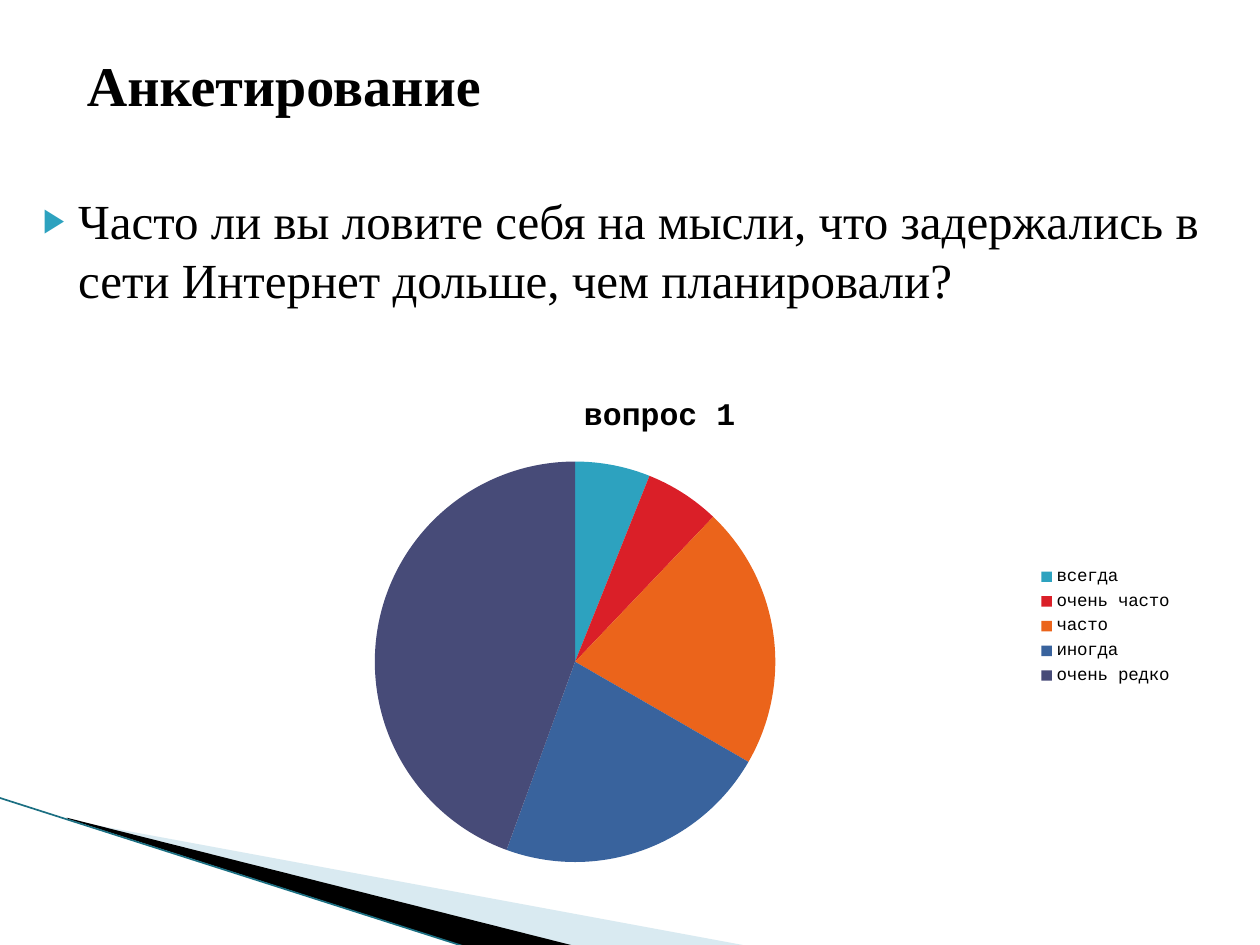
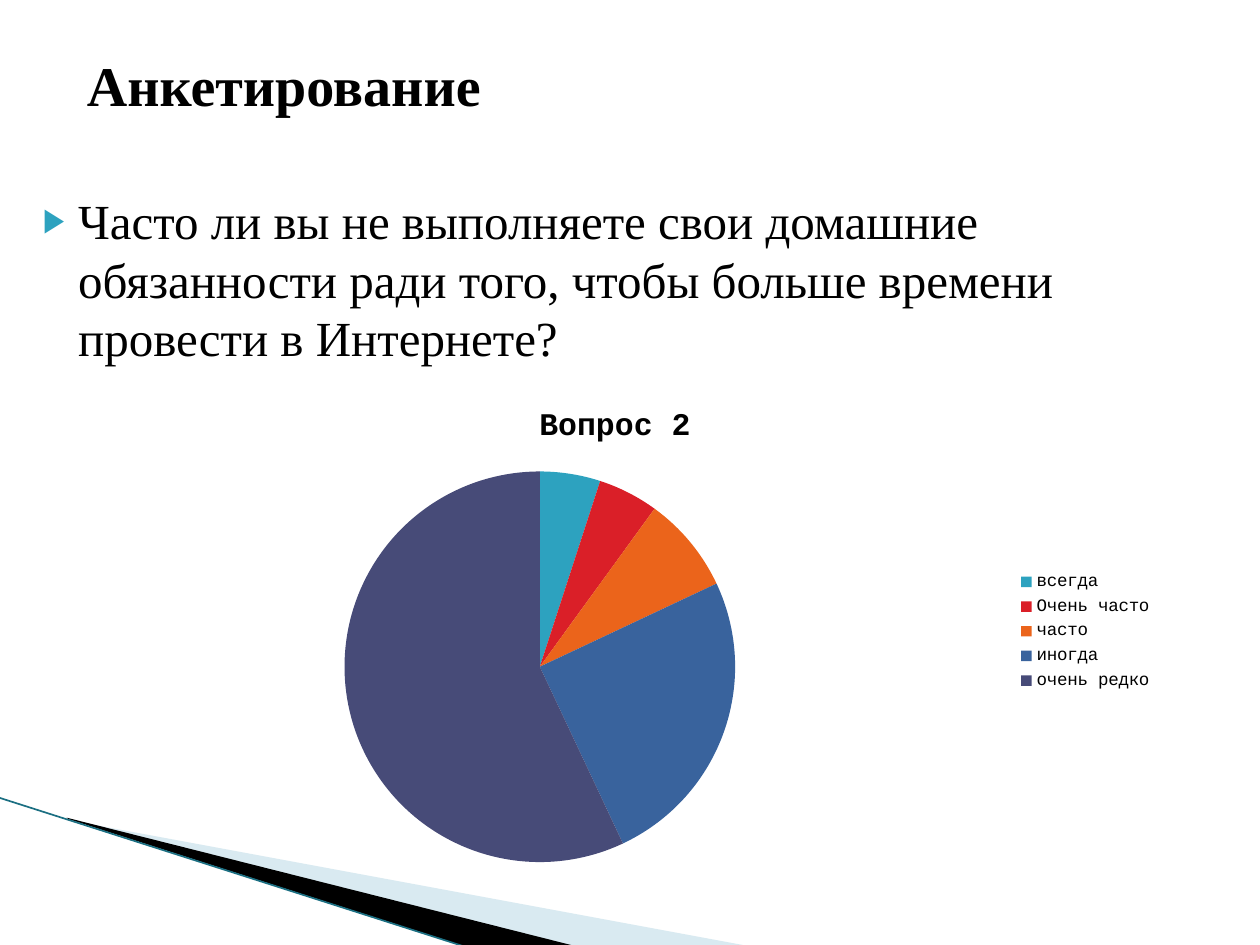
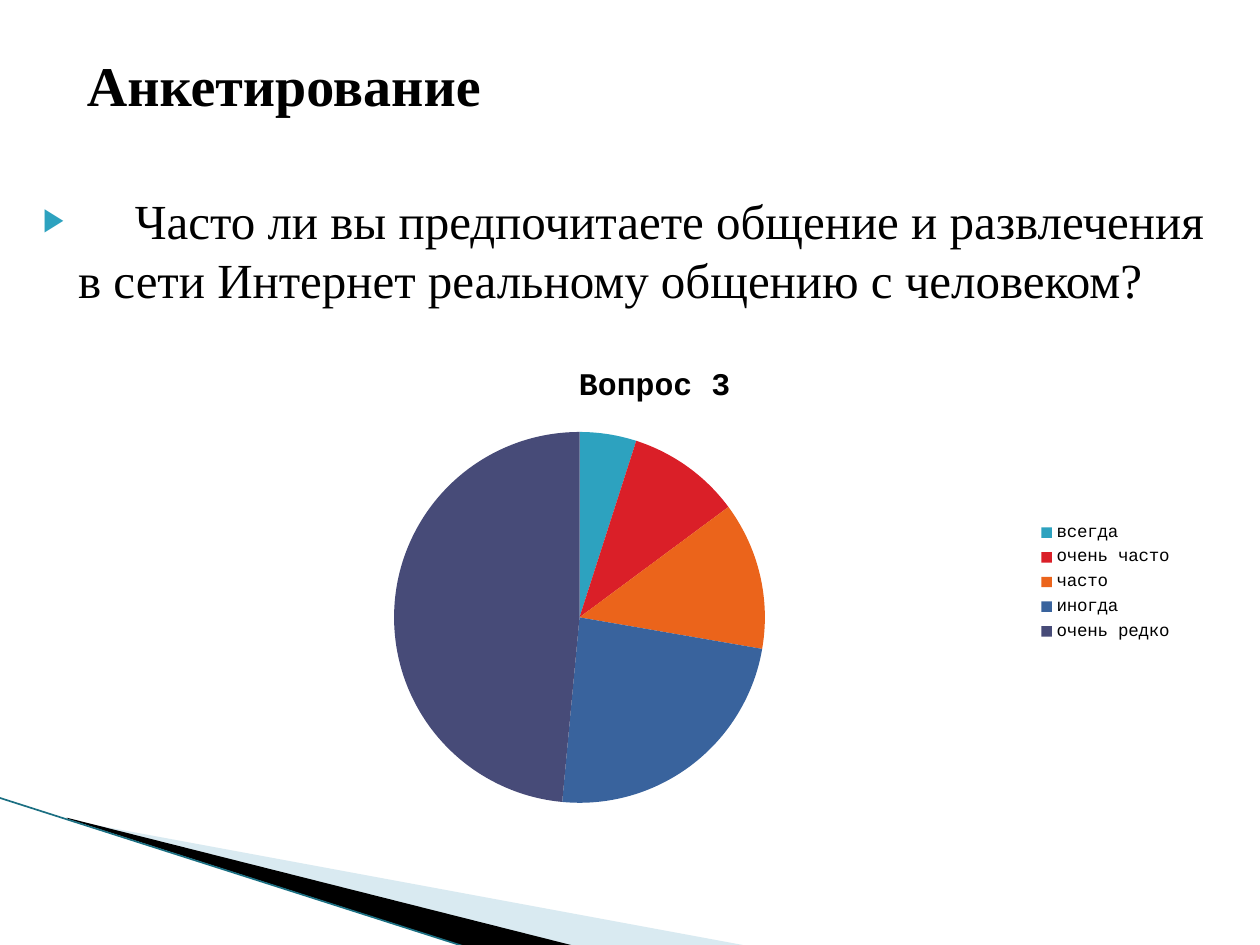
from lxml import etree
from pptx import Presentation
from pptx.chart.data import CategoryChartData
from pptx.dml.color import RGBColor
from pptx.enum.chart import XL_CHART_TYPE as ChartType, XL_LEGEND_POSITION as LegendPosition
from pptx.enum.shapes import MSO_CONNECTOR as Connector
from pptx.enum.text import MSO_ANCHOR as Anchor, MSO_AUTO_SIZE as AutoSize, PP_ALIGN as Align
from pptx.oxml.ns import qn
from pptx.util import Inches, Pt

HEADING = "Анкетирование"
SERIF, MONO = "Times New Roman", "Courier New"
BLACK, TEAL, EDGE = "000000", "2DA2BF", "1B6F82"
SLICE_COLORS = [TEAL, "DA1F28", "EB641B", "39639D", "474B78"]
ANSWERS = ["всегда", "очень часто", "часто", "иногда", "очень редко"]

HEADING_BOX = (0.59, 0.04, 8.17, 1.25)
QUESTION_BOX = (0.12, 1.47, 9.58, 6.01)
WEDGES = [
    ([(0.55, 6.51), (5.95, 7.51), (4.56, 7.51), (0.55, 6.5)], "A0CBDC", 40),
    ([(0.53, 6.49), (4.57, 7.51), (3.72, 7.52), (0.54, 6.5)], BLACK, 100),
]
EDGE_LINE = (-0.01, 6.33, 3.71, 7.52)

SURVEY = [
    {
        "question": "Часто ли вы ловите себя на мысли, что задержались в сети Интернет "
                    "дольше, чем планировали?",
        "chart_title": " вопрос 1",
        "answers": ANSWERS,
        "percents": [6, 6, 21, 22, 44],
        "chart_box": (0.91, 2.96, 8.5, 4.02),
    },
    {
        "question": "Часто ли вы не выполняете свои домашние обязанности ради того, "
                    "чтобы больше времени провести в Интернете?",
        "chart_title": "Вопрос 2",
        "answers": ["всегда", "Очень часто", *ANSWERS[2:]],
        "percents": [5, 5, 8, 25, 57],
        "chart_box": (0.51, 3.04, 8.74, 3.94),
    },
    {
        "question": " Часто ли вы предпочитаете общение и развлечения в сети Интернет "
                    "реальному общению с человеком?",
        "chart_title": "Вопрос 3",
        "answers": ANSWERS,
        "percents": [5, 10, 13, 24, 49],
        "chart_box": (0.98, 2.73, 8.43, 3.78),
    },
]


def rgb(color):
    """Turn a hex string into a colour."""
    return RGBColor.from_string(color)


def inches(box):
    """Turn a tuple of numbers into lengths."""
    return [Inches(length) for length in box]


def style(font, name, size, bold=False):
    """Set face, size, weight and the common black colour."""
    font.name, font.size, font.bold = name, Pt(size), bold
    font.color.rgb = rgb(BLACK)


def place(part, box):
    """Move a placeholder to its box."""
    part.left, part.top, part.width, part.height = inches(box)


def add_wedge(shapes, corners, color, opacity):
    """Draw one corner wedge."""
    start, *others = [inches(corner) for corner in corners]
    builder = shapes.build_freeform(*start)
    builder.add_line_segments(others, close=True)
    wedge = builder.convert_to_shape()
    wedge.shadow.inherit = False
    wedge.fill.solid()
    wedge.fill.fore_color.rgb = rgb(color)
    wedge.line.fill.background()
    if opacity < 100:
        tint = wedge.element.find(".//" + qn("a:srgbClr"))
        etree.SubElement(tint, qn("a:alpha"), val=str(opacity * 1000))
    return wedge


def add_edge(shapes):
    """Draw the thin line along the wedges."""
    edge = shapes.add_connector(Connector.STRAIGHT, *inches(EDGE_LINE))
    edge.line.color.rgb = rgb(EDGE)
    edge.line.width = Pt(0.95)
    etree.SubElement(edge.element.spPr, qn("a:effectLst"))
    return edge


def decorate_layout(layout, slide):
    """Put the corner decoration on the layout, behind its placeholders."""
    for placeholder in list(layout.placeholders):
        if placeholder.placeholder_format.idx >= 10:
            placeholder.element.getparent().remove(placeholder.element)
    decoration = [add_wedge(slide.shapes, *wedge) for wedge in WEDGES]
    decoration.append(add_edge(slide.shapes))
    for position, part in enumerate(decoration, start=2):
        layout.shapes.element.insert(position, part.element)


def fill_heading(heading):
    """Write the slide title."""
    place(heading, HEADING_BOX)
    frame = heading.text_frame
    frame.text = HEADING
    frame.vertical_anchor = Anchor.MIDDLE
    frame.auto_size = AutoSize.NONE
    frame.paragraphs[0].alignment = Align.LEFT
    style(frame.paragraphs[0].runs[0].font, SERIF, 32, bold=True)


def fill_question(body, question):
    """Write the question with its triangular bullet and any widened lead-in space."""
    place(body, QUESTION_BOX)
    frame = body.text_frame
    frame.auto_size = AutoSize.NONE
    frame.margin_top = Inches(0.04)
    paragraph = frame.paragraphs[0]
    paragraph.space_before = Pt(0)
    paragraph.line_spacing = 1.0
    properties = paragraph._p.get_or_add_pPr()
    properties.set("marL", str(Inches(0.4)))
    properties.set("indent", str(Inches(-0.28)))
    bullet_color = etree.SubElement(properties, qn("a:buClr"))
    etree.SubElement(bullet_color, qn("a:srgbClr"), val=TEAL)
    etree.SubElement(properties, qn("a:buSzPct"), val="68000")
    etree.SubElement(properties, qn("a:buChar"), char="▶")
    if question.startswith(" "):
        lead = paragraph.add_run()
        lead.text = " "
        style(lead.font, MONO, 27)
        lead._r.get_or_add_rPr().set("spc", "1620")
    wording = paragraph.add_run()
    wording.text = question.lstrip()
    style(wording.font, SERIF, 28)


def add_pie(slide, item):
    """Chart the answers to one question."""
    data = CategoryChartData()
    data.categories = item["answers"]
    data.add_series(item["chart_title"], item["percents"])
    chart = slide.shapes.add_chart(ChartType.PIE, *inches(item["chart_box"]), data).chart
    style(chart.font, MONO, 10)
    chart.has_title = True
    title = chart.chart_title
    title.include_in_layout = False
    title.text_frame.text = item["chart_title"]
    style(title.text_frame.paragraphs[0].runs[0].font, MONO, 18, bold=True)
    chart.has_legend = True
    chart.legend.position = LegendPosition.RIGHT
    chart.legend.include_in_layout = False
    pie = chart.plots[0]
    pie.vary_by_categories = True
    for index, color in enumerate(SLICE_COLORS):
        fill = pie.series[0].points[index].format.fill
        fill.solid()
        fill.fore_color.rgb = rgb(color)


def main():
    """Build the survey slides."""
    deck = Presentation()
    deck.slide_width, deck.slide_height = inches((10, 7.5))
    layout = deck.slide_layouts[1]
    for number, item in enumerate(SURVEY):
        slide = deck.slides.add_slide(layout)
        if number == 0:
            decorate_layout(layout, slide)
        fill_heading(slide.shapes.title)
        fill_question(slide.placeholders[1], item["question"])
        add_pie(slide, item)
    deck.save("out.pptx")


if __name__ == "__main__":
    main()
